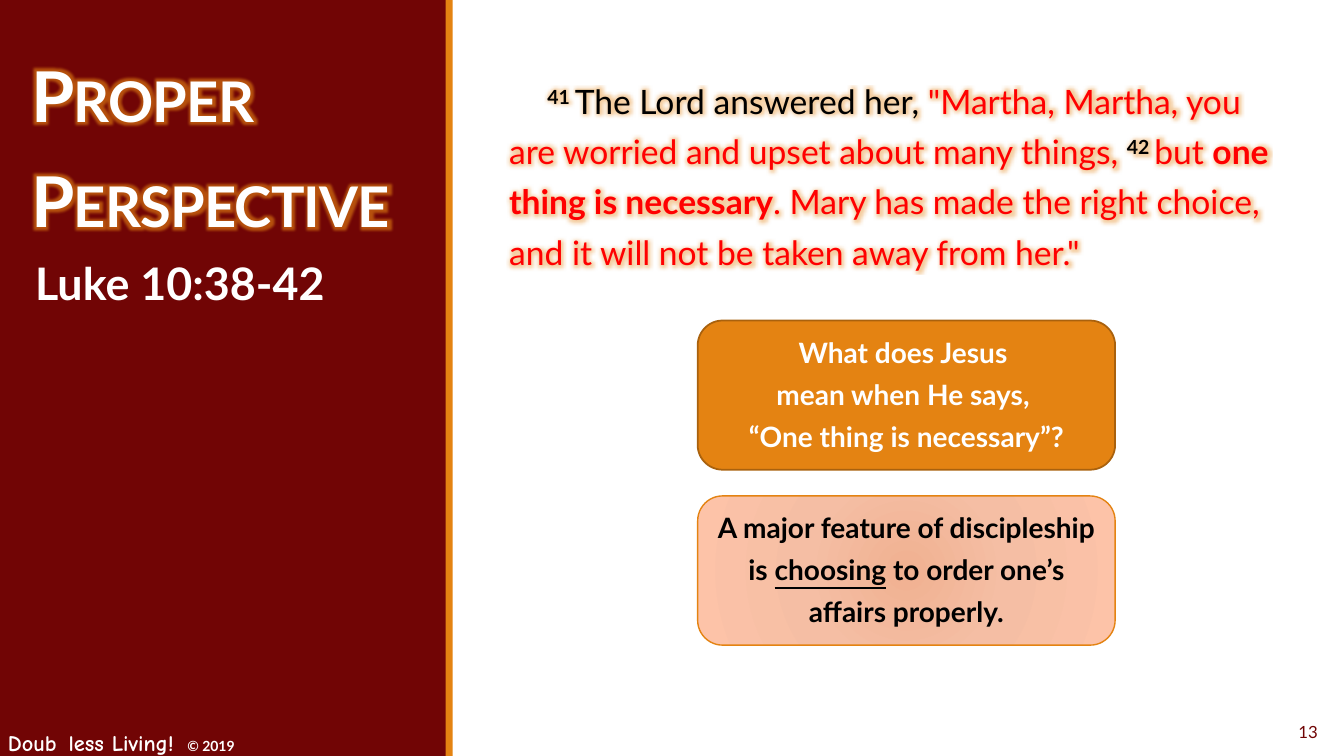
from lxml import etree
from pptx import Presentation
from pptx.dml.color import RGBColor
from pptx.enum.shapes import MSO_SHAPE as Shape
from pptx.enum.text import MSO_ANCHOR as Anchor, MSO_AUTO_SIZE as AutoSize, PP_ALIGN as Align
from pptx.oxml import parse_xml
from pptx.oxml.ns import nsdecls, qn
from pptx.util import Inches, Pt

COLORS = {
    "maroon": "710505", "orange": "E48312", "brown": "A9610D",
    "white": "FFFFFF", "black": "000000", "red": "FF0000",
}
PEACH_STOPS = [(0, "F0B191"), (45, "F5BEA4"), (100, "FDC3A8")]


def add_text(para, text, size, color="white", bold=True, font="Lato",
             underline=None, glow=None, **attributes):
    """Add a run per line; glow is (points, percent), attributes go on the run."""
    for number, line in enumerate(text.split("\n")):
        if number:
            para.add_line_break()
        span = para.add_run()
        span.text = line
        span.font.size = Pt(size)
        span.font.bold = bold
        span.font.underline = underline
        span.font.color.rgb = RGBColor.from_string(COLORS[color])
        span.font.name = font
        properties = span._r.get_or_add_rPr()
        for name, value in attributes.items():
            properties.set(name, str(value))
        if glow:
            radius, opacity = glow
            properties.find(qn("a:solidFill")).addnext(parse_xml(
                f'<a:effectLst {nsdecls("a")}><a:glow rad="{Pt(radius)}">'
                f'<a:srgbClr val="{COLORS["orange"]}"><a:alpha val="{opacity * 1000}"/>'
                '</a:srgbClr></a:glow></a:effectLst>'))


def add_box(left, top, width, height, shape=None, fill=None, line=None,
            line_width=1, margins=(0.1, 0.05, 0.1, 0.05), anchor=Anchor.TOP,
            align=Align.LEFT, spacing=None, grow=False):
    """Add a preset shape, or a text box when no shape is given."""
    place = [Inches(length) for length in (left, top, width, height)]
    if shape is None:
        box = page.shapes.add_textbox(*place)
    else:
        box = page.shapes.add_shape(shape, *place)
        box.shadow.inherit = False
        if fill:
            box.fill.solid()
            box.fill.fore_color.rgb = RGBColor.from_string(COLORS[fill])
        if line:
            box.line.color.rgb = RGBColor.from_string(COLORS[line])
            box.line.width = Pt(line_width)
        else:
            box.line.fill.background()
    frame = box.text_frame
    frame.word_wrap = True
    frame.auto_size = AutoSize.SHAPE_TO_FIT_TEXT if grow else AutoSize.NONE
    frame.vertical_anchor = anchor
    (frame.margin_left, frame.margin_top,
     frame.margin_right, frame.margin_bottom) = map(Inches, margins)
    para = frame.paragraphs[0]
    para.alignment = align
    para.line_spacing = spacing
    return box, para


deck = Presentation()
deck.slide_width, deck.slide_height = Inches(13.33), Inches(7.5)
page = deck.slides.add_slide(deck.slide_layouts[6])

# Side panel, footer and slide number
add_box(0, 0, 4.43, 7.5, Shape.RECTANGLE, "maroon")
add_box(4.42, 0, 0.07, 7.5, Shape.RECTANGLE, "orange")

footer, para = add_box(-0.02, 7.07, 3.92, 0.5, grow=True)
add_text(para, "Doub", 16, font="Comic Neue")
add_text(para, " ", 24, font="Comic Neue")
add_text(para, "less Living!", 16, font="Comic Neue")
add_text(para, " ", 16, font="Comic Neue", spc=400)
add_text(para, "© 2019", 10)

number, para = add_box(11.82, 7.06, 1.35, 0.4, anchor=Anchor.MIDDLE, align=Align.RIGHT)
add_text(para, "13", 12, "maroon", bold=False)

# Scripture passage
passage, para = add_box(5.05, 0.65, 7.62, 6.42, margins=(0, 0.05, 0, 0.05), spacing=1.25)
para.space_after = Pt(2)
para._p.get_or_add_pPr().set("indent", str(Inches(0.38)))
verse_number = {"color": "black", "baseline": 30000}
for text, style in [
    ("41 ", verse_number),
    ("The Lord answered her, ", {"color": "black", "bold": False}),
    ('"Martha, Martha, you are worried and upset about many things, ', {"bold": False}),
    ("42 ", verse_number),
    ("but ", {"bold": False}),
    ("one thing is necessary", {}),
    (". Mary has made the right choice, and it will not be taken away from her.\"",
     {"bold": False}),
]:
    add_text(para, text, 24, **{"color": "red", "glow": (8, 40), **style})

# Title and reference
title, para = add_box(0.21, 0.26, 4, 2.98, spacing=1.25)
add_text(para, "Proper Perspective", 50, glow=(8, 60), spc=-50, cap="small")

reference, para = add_box(0.25, 2.49, 3.71, 0.64, grow=True)
add_text(para, "Luke 10:38-42", 32)

# Question and answer
card = {"shape": Shape.ROUNDED_RECTANGLE, "margins": (0.1, 0, 0.1, 0.1),
        "anchor": Anchor.MIDDLE, "align": Align.CENTER, "spacing": 1.25}
question, para = add_box(6.92, 3.18, 4.14, 1.48, fill="orange", line="brown",
                         line_width=1.25, **card)
add_text(para, "What does Jesus \nmean when He says, \n“One thing is necessary”?", 20)

answer, para = add_box(6.92, 4.92, 4.14, 1.48, line="orange", **card)
gradient = parse_xml(
    f'<a:gradFill {nsdecls("a")} rotWithShape="1"><a:gsLst/><a:path path="circle">'
    '<a:fillToRect l="100000" t="100000" r="100000" b="100000"/></a:path></a:gradFill>')
for position, color in PEACH_STOPS:
    stop = etree.SubElement(gradient[0], qn("a:gs"), pos=str(position * 1000))
    etree.SubElement(stop, qn("a:srgbClr"), val=color)
answer._element.spPr.find(qn("a:prstGeom")).addnext(gradient)
add_text(para, "A major feature of discipleship is ", 20, "black")
add_text(para, "choosing", 20, "black", underline=True)
add_text(para, " to order one’s affairs properly.", 20, "black")

deck.save("out.pptx")
